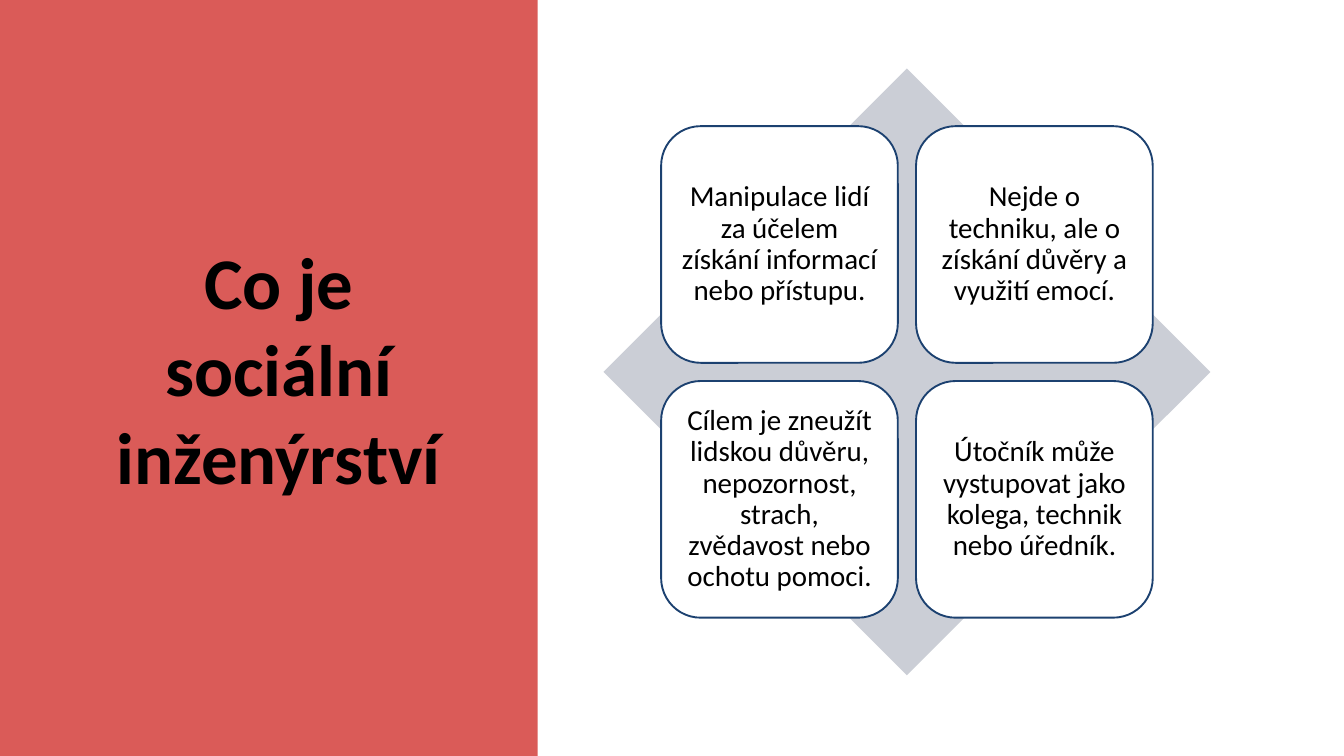
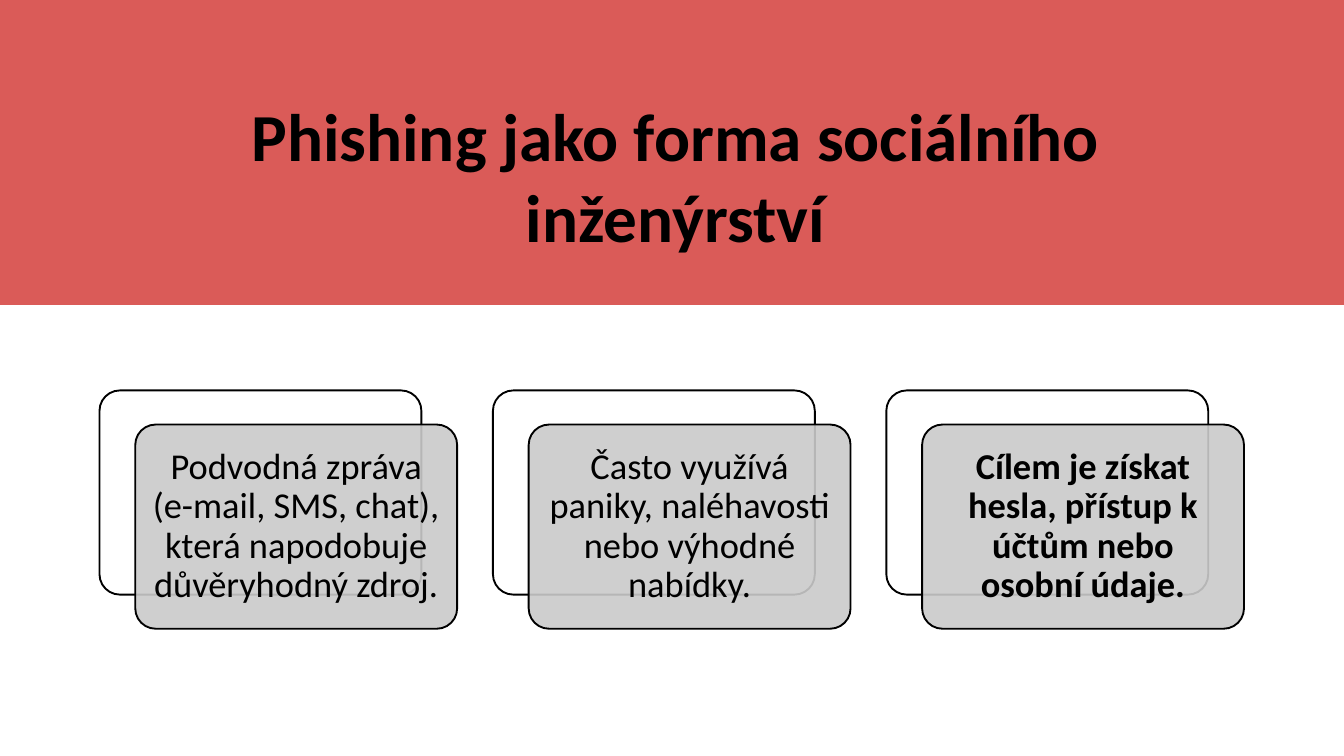
from dataclasses import dataclass

from lxml import etree
from pptx import Presentation
from pptx import util as u
from pptx.dml.color import RGBColor
from pptx.enum import shapes, text
from pptx.oxml.ns import qn


@dataclass(frozen=True)
class Theme:
    font: str = "Calibri"
    ink: str = "000000"
    paper: str = "FFFFFF"
    band: str = "DA5B58"
    diamond: str = "CBCED6"
    navy: str = "1C4170"
    grey: str = "CACACA"
    side_title: int = 78
    top_title: int = 72
    grid_text: int = 31
    row_text: int = 39
    outline: int = 2


THEME = Theme()
WIDTH, HEIGHT = 50.8, 28.58
TITLE_ONLY = 5


def place(shape, box):
    shape.left, shape.top, shape.width, shape.height = map(u.Cm, box)


def write(shape, words, size, bold=False, spacing=1.0, inset=None):
    """Set one centred paragraph; inset applies to all four sides."""
    tf = shape.text_frame
    tf.word_wrap = True
    tf.auto_size = text.MSO_AUTO_SIZE.NONE
    tf.vertical_anchor = text.MSO_ANCHOR.MIDDLE
    if inset is not None:
        tf.margin_left = tf.margin_top = u.Cm(inset)
        tf.margin_right = tf.margin_bottom = u.Cm(inset)
    p = tf.paragraphs[0]
    p.text = words
    p.alignment = text.PP_ALIGN.CENTER
    p.line_spacing = spacing
    p.font.name = THEME.font
    p.font.size = u.Pt(size)
    p.font.bold = bold
    p.font.color.rgb = RGBColor.from_string(THEME.ink)


def add_shape(slide, kind, box, fill, line=None, corner=None, opacity=100):
    sp = slide.shapes.add_shape(kind, *map(u.Cm, box))
    sp.shadow.inherit = False
    sp.fill.solid()
    sp.fill.fore_color.rgb = RGBColor.from_string(fill)
    if opacity < 100:
        color = sp.fill._xPr.find(f".//{qn('a:srgbClr')}")
        etree.SubElement(color, qn("a:alpha"), val=str(opacity * 1000))
    if line:
        sp.line.color.rgb = RGBColor.from_string(line)
        sp.line.width = u.Pt(THEME.outline)
    else:
        sp.line.fill.background()
    if corner is not None:
        sp.adjustments[0] = corner
    return sp


def add_titled_slide(prs, title, size, title_box, band_box):
    slide = prs.slides.add_slide(prs.slide_layouts[TITLE_ONLY])
    band = add_shape(slide, shapes.MSO_SHAPE.RECTANGLE, band_box, THEME.band)
    slide.shapes.title._element.addprevious(band._element)
    place(slide.shapes.title, title_box)
    write(slide.shapes.title, title, size, bold=True)
    return slide


def add_diamond_grid(slide, left, top, side, items):
    """Lay four cards two by two over a diamond of the given side."""
    add_shape(slide, shapes.MSO_SHAPE.DIAMOND, (left, top, side, side), THEME.diamond)
    margin, card, pitch = 0.095 * side, 0.39 * side, 0.42 * side
    for i, words in enumerate(items):
        row, col = divmod(i, 2)
        box = (left + margin + col * pitch, top + margin + row * pitch, card, card)
        sp = add_shape(slide, shapes.MSO_SHAPE.ROUNDED_RECTANGLE, box,
                       THEME.paper, THEME.navy, corner=0.167)
        write(sp, words, THEME.grid_text, spacing=0.9, inset=0.33)


def add_layered_cards(slide, left, top, width, height, items):
    """Lay a row of cards, each in front of an empty one; the last is bold."""
    card = width * 9 / (11 * len(items) - 1)
    shift_x, shift_y = card / 9, 1.29
    pitch = card + 2 * shift_x
    for i, words in enumerate(items):
        x, h = left + i * pitch, height - shift_y
        add_shape(slide, shapes.MSO_SHAPE.ROUNDED_RECTANGLE, (x, top, card, h),
                  THEME.paper, THEME.ink, corner=0.1)
        front = add_shape(slide, shapes.MSO_SHAPE.ROUNDED_RECTANGLE,
                          (x + shift_x, top + shift_y, card, h),
                          THEME.grey, THEME.ink, corner=0.1, opacity=90)
        write(front, words, THEME.row_text, bold=i == len(items) - 1,
              spacing=0.9, inset=0.41)


def build_definition(prs):
    slide = add_titled_slide(prs, "Co je sociální inženýrství", THEME.side_title,
                             (3.5, 2.31, 14.07, 23.19), (0, 0, 20.32, HEIGHT))
    add_diamond_grid(slide, 22.81, 2.59, 22.94, [
        "Manipulace lidí za účelem získání informací nebo přístupu.",
        "Nejde o techniku, ale o získání důvěry a využití emocí.",
        "Cílem je zneužít lidskou důvěru, nepozornost, strach, "
        "zvědavost nebo ochotu pomoci.",
        "Útočník může vystupovat jako kolega, technik nebo úředník.",
    ])


def build_phishing(prs):
    slide = add_titled_slide(prs, "Phishing jako forma sociálního inženýrství",
                             THEME.top_title,
                             (4.34, 3.38, 42.39, 6.48), (0, 0, WIDTH, 11.53))
    add_layered_cards(slide, 3.76, 14.76, 43.26, 9.01, [
        "Podvodná zpráva (e-mail, SMS, chat), která napodobuje důvěryhodný zdroj.",
        "Často využívá paniky, naléhavosti nebo výhodné nabídky.",
        "Cílem je získat hesla, přístup k účtům nebo osobní údaje.",
    ])


def main():
    prs = Presentation()
    prs.slide_width, prs.slide_height = u.Cm(WIDTH), u.Cm(HEIGHT)
    build_definition(prs)
    build_phishing(prs)
    prs.save("out.pptx")


if __name__ == "__main__":
    main()
